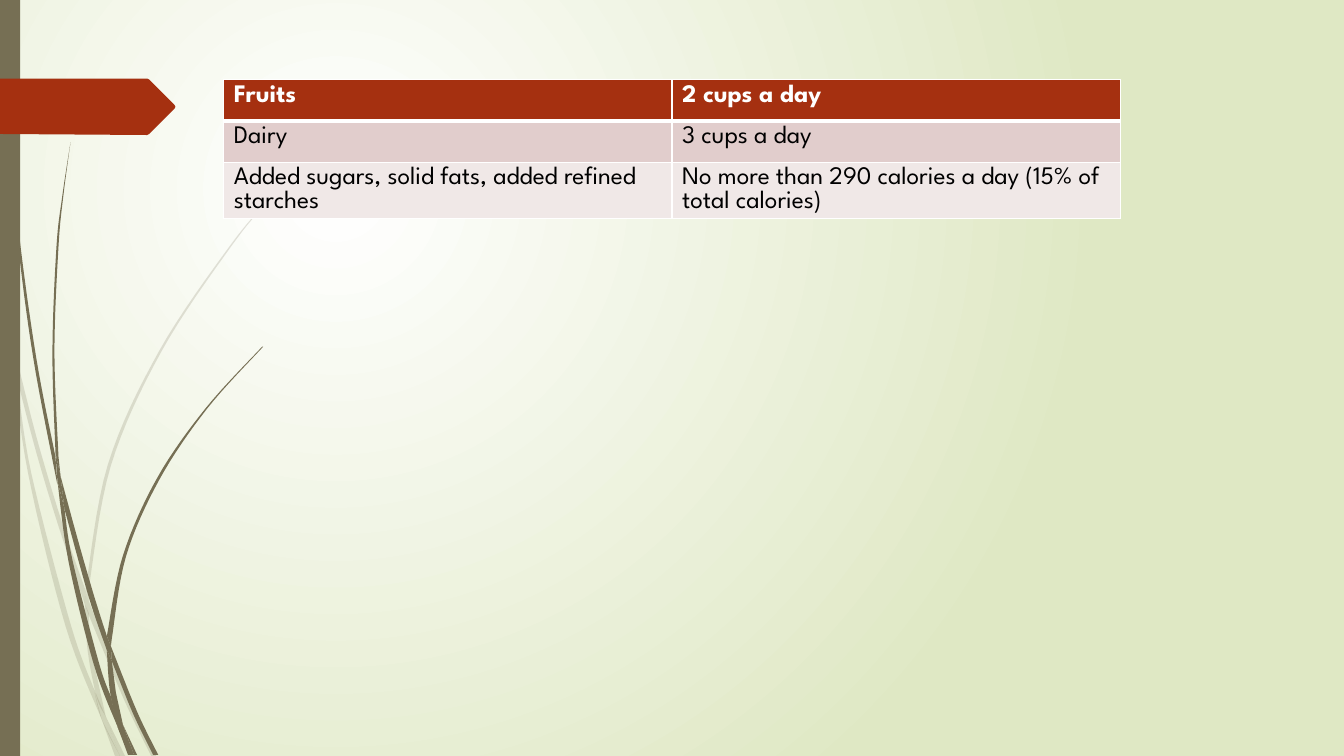
from lxml import etree
from pptx import Presentation
from pptx.dml.color import RGBColor
from pptx.enum.shapes import MSO_SHAPE
from pptx.oxml.ns import qn
from pptx.util import Inches, Pt

RECTANGLE = MSO_SHAPE.RECTANGLE
FONT = "League Spartan"
WHITE, BLACK, OLIVE, RUST = "FFFFFF", "000000", "766F54", "A53010"
ROWS = [
    ("Fruits", "2 cups a day"),
    ("Dairy", "3 cups a day"),
    ("Added sugars, solid fats, added refined starches",
     "No more than 290 calories a day (15% of total calories)"),
]
ROW_FILLS = [RUST, "E1CDCC", "F0E8E7"]
PALE_BLADES = [
    [[(0, 2.82), (.09, 3.22), (.11, 3.5)], [(.1, 3.44), (0, 2.99)]],
    [[(.14, 3.45), (.36, 4.33), (.62, 5.2), (.85, 5.86)],
     [(.84, 5.99), (.58, 5.22), (.36, 4.49), (.17, 3.76)]],
    [[(.88, 5.96), (1.09, 6.5), (1.27, 6.92), (1.55, 7.5)],
     [(1.5, 7.5), (1.23, 6.94), (.88, 6.1)]],
    [[(1.05, 7.11), (1.24, 7.5)], [(1.19, 7.5)]],
    [[(.11, 3.5), (.28, 4.7), (.65, 6.21), (1.01, 7.14)],
     [(.93, 6.83), (.7, 6.19), (.31, 4.69), (.17, 3.76)]],
    [[(.84, 5.99), (.87, 6.46), (.96, 6.92), (1.05, 7.11)],
     [(1.05, 7.11), (.91, 6.46), (.88, 6.08)]],
    [[(.88, 5.96)],
     [(.88, 5.84), (1.1, 4.62), (1.6, 3.49), (2.29, 2.45), (2.68, 1.98), (3.12, 1.54)],
     [(3.12, 1.53), (2.68, 1.97), (2.28, 2.44), (1.58, 3.48), (1.07, 4.61), (.85, 5.84)]],
    [[(1.01, 7.14), (1.14, 7.5)], [(1.19, 7.5)]],
    [[(.88, 6.1), (.88, 5.96)], [(.85, 5.86), (.84, 5.99)]],
    [[(.93, 6.83), (1.01, 7.14), (1.19, 7.5)], [(1.05, 7.11)]],
]
DARK_BLADES = [
    [[(.04, 0), (.08, 1.09), (.19, 2.32), (.36, 3.55), (.55, 4.53)],
     [(.57, 4.81), (.33, 3.55), (.17, 2.33), (.07, 1.1), (.03, 0)]],
    [[(.6, 4.72), (.76, 5.31), (.93, 5.9), (1.06, 6.31)],
     [(1.06, 6.45), (.88, 5.92), (.64, 5.05)]],
    [[(1.1, 6.41), (1.36, 7.06), (1.57, 7.49)],
     [(1.52, 7.49), (1.32, 7.08), (1.11, 6.56)]],
    [[(.57, 4.77), (.68, 5.57), (.93, 6.59), (1.17, 7.22)],
     [(1.1, 6.91), (.98, 6.57), (.72, 5.56), (.64, 5.05)]],
    [[(.7, 1.41), (.62, 1.93), (.56, 2.45), (.52, 3.49), (.55, 4.49)],
     [(.6, 4.72)],
     [(.58, 4.53), (.54, 3.49), (.58, 2.45), (.63, 1.93), (.7, 1.41)]],
    [[(1.22, 7.19), (1.36, 7.49)], [(1.33, 7.49)]],
    [[(.55, 4.49), (.6, 4.72)], [(.64, 5.05), (.57, 4.77)]],
    [[(1.06, 6.31), (1.22, 5.51), (1.56, 4.74), (2.04, 4.05), (2.6, 3.44)],
     [(2.61, 3.44), (2.05, 4.06), (1.58, 4.76), (1.25, 5.52), (1.11, 6.33)],
     [(1.1, 6.41)]],
    [[(1.17, 7.22), (1.27, 7.49)], [(1.31, 7.49)]],
    [[(1.06, 6.45), (1.1, 6.91), (1.22, 7.19)], [(1.15, 6.87), (1.11, 6.56)]],
    [[(1.06, 6.31), (1.1, 6.41)], [(1.11, 6.56), (1.06, 6.45)]],
    [[(1.1, 6.91), (1.17, 7.22), (1.3, 7.49)], [(1.33, 7.49), (1.22, 7.19)]],
]
FLAG = [(0, .78), (1.46, .78), (1.48, .79), (1.73, 1.04), (1.74, 1.06),
        (1.73, 1.08), (1.48, 1.33), (1.46, 1.34), (0, 1.33)]


def color(value):
    """Turn a hex string into a colour."""
    return RGBColor.from_string(value)


def smooth(points, steps=8):
    """Return points along a smooth curve through the given points."""
    if len(points) < 3:
        return points
    padded = [points[0], *points, points[-1]]
    curve = [points[0]]
    for a, b, c, d in zip(padded, padded[1:], padded[2:], padded[3:]):
        for step in range(1, steps + 1):
            t = step / steps
            curve.append(tuple(
                q + t * (r - p) / 2 + t ** 2 * (2 * p - 5 * q + 4 * r - s) / 2
                + t ** 3 * (3 * q - p - 3 * r + s) / 2
                for p, q, r, s in zip(a, b, c, d)))
    return curve


def paint(shape, fill, opacity=100):
    """Give a shape a plain fill without line or shadow."""
    shape.shadow.inherit = False
    shape.line.fill.background()
    shape.fill.solid()
    shape.fill.fore_color.rgb = color(fill)
    if opacity < 100:
        tone = shape.element.spPr.find(f"{qn('a:solidFill')}/{qn('a:srgbClr')}")
        etree.SubElement(tone, qn("a:alpha"), val=str(opacity * 1000))


def add_outline(slide, points, fill, opacity=100):
    """Draw a closed outline through points given in inches."""
    start, *rest = [(Inches(x), Inches(y)) for x, y in points]
    builder = slide.shapes.build_freeform(*start)
    builder.add_line_segments(rest, close=True)
    paint(builder.convert_to_shape(), fill, opacity)


def add_grass(slide, blades, opacity):
    """Draw a tuft whose blades are bounded by smooth edges."""
    for edges in blades:
        points = [point for edge in edges for point in smooth(edge)]
        add_outline(slide, points, OLIVE, opacity)


def set_background(slide):
    """Fill the background with a circular gradient."""
    fill = slide.background.fill
    fill.gradient()
    for stop, value in zip(fill.gradient_stops, (WHITE, "DFE8C4")):
        stop.color.rgb = color(value)
    linear = slide.element.find(f".//{qn('a:lin')}")
    circle = etree.Element(qn("a:path"), path="circle")
    etree.SubElement(circle, qn("a:fillToRect"), l="50000", t="50000", r="100000", b="100000")
    linear.getparent().replace(linear, circle)


def set_borders(cell, top, bottom):
    """Draw white cell borders with the given top and bottom widths."""
    properties = cell._tc.get_or_add_tcPr()
    for side, width in (("L", 1), ("R", 1), ("T", top), ("B", bottom)):
        line = etree.SubElement(properties, qn(f"a:ln{side}"), w=str(Pt(width)))
        fill = etree.SubElement(line, qn("a:solidFill"))
        etree.SubElement(fill, qn("a:srgbClr"), val=WHITE)


def add_servings_table(slide):
    """Add the table of daily servings."""
    table = slide.shapes.add_table(
        len(ROWS), 2, Inches(2.22), Inches(.79), Inches(8.89), Inches(1.23)).table
    for row_index, (texts, fill) in enumerate(zip(ROWS, ROW_FILLS)):
        table.rows[row_index].height = Inches(.41)
        header = row_index == 0
        for column_index, text in enumerate(texts):
            cell = table.cell(row_index, column_index)
            set_borders(cell, 3 if row_index == 1 else 1, 3 if header else 1)
            cell.fill.solid()
            cell.fill.fore_color.rgb = color(fill)
            cell.text = text
            font = cell.text_frame.paragraphs[0].font
            font.name, font.size, font.bold = FONT, Pt(18), header
            font.color.rgb = color(WHITE if header else BLACK)


def main():
    """Build and save the slide."""
    presentation = Presentation()
    presentation.slide_width, presentation.slide_height = Inches(13.33), Inches(7.5)
    slide = presentation.slides.add_slide(presentation.slide_layouts[6])
    set_background(slide)
    add_grass(slide, PALE_BLADES, 20)
    add_grass(slide, DARK_BLADES, 100)
    paint(slide.shapes.add_shape(RECTANGLE, 0, 0, Inches(.2), Inches(7.5)), OLIVE)
    add_outline(slide, FLAG, RUST)
    add_servings_table(slide)
    presentation.save("out.pptx")


if __name__ == "__main__":
    main()
